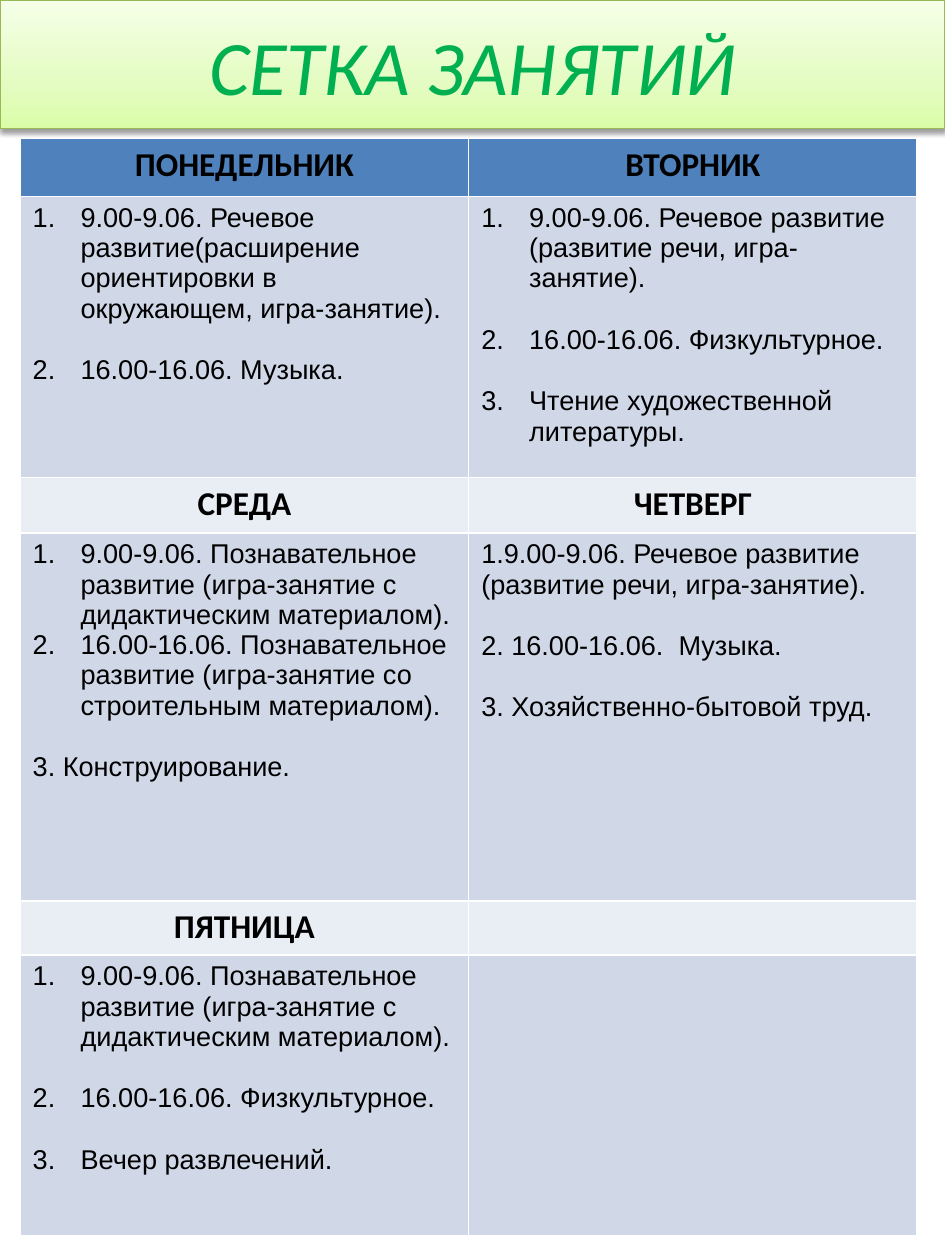
from copy import deepcopy

from lxml import etree
from pptx import Presentation
from pptx.dml.color import RGBColor
from pptx.enum.text import MSO_ANCHOR, PP_ALIGN
from pptx.oxml.ns import qn
from pptx.util import Inches, Pt

CENTER = PP_ALIGN.CENTER
MIDDLE = MSO_ANCHOR.MIDDLE
BLACK = RGBColor(0x00, 0x00, 0x00)
GREEN = RGBColor(0x00, 0xB0, 0x50)
OLIVE = RGBColor(0x98, 0xB9, 0x55)
BLUE = RGBColor(0x4F, 0x81, 0xBD)
PALE = RGBColor(0xE9, 0xED, 0xF4)
MIST = RGBColor(0xD0, 0xD8, 0xE8)
STOPS = [
    (0, RGBColor(0xDA, 0xFD, 0xA7)),
    (0.35, RGBColor(0xE4, 0xFC, 0xC2)),
    (1, RGBColor(0xF5, 0xFF, 0xE7)),
]

HEIGHTS = [0.46, 2.23, 0.44, 2.92, 0.43, 2.23]
INDENT = Inches(0.38)
GAP = Pt(17.8)
NUMBER, HANG, PLAIN = "number", "hang", "plain"

PLAY = "9.00-9.06. Познавательное развитие (игра-занятие с дидактическим материалом)."
SPEECH = "9.00-9.06. Речевое развитие (развитие речи, игра-занятие)."
SPORT = "16.00-16.06. Физкультурное."

# Each item is (kind, gap before, text).
DAYS = [
    ("ПОНЕДЕЛЬНИК", [
        (NUMBER, False, "9.00-9.06. Речевое развитие(расширение ориентировки "
                        "в окружающем, игра-занятие)."),
        (NUMBER, True, "16.00-16.06. Музыка."),
    ]),
    ("ВТОРНИК", [
        (NUMBER, False, SPEECH),
        (NUMBER, True, SPORT),
        (NUMBER, True, "Чтение художественной литературы."),
    ]),
    ("СРЕДА", [
        (NUMBER, False, PLAY),
        (NUMBER, False, "16.00-16.06. Познавательное развитие (игра-занятие "
                        "со строительным материалом)."),
        (HANG, True, "3. Конструирование."),
    ]),
    ("ЧЕТВЕРГ", [
        (PLAIN, False, "1." + SPEECH),
        (PLAIN, True, "2. 16.00-16.06.  Музыка."),
        (PLAIN, True, "3. Хозяйственно-бытовой труд."),
    ]),
    ("ПЯТНИЦА", [
        (NUMBER, False, PLAY),
        (NUMBER, True, SPORT),
        (NUMBER, True, "Вечер развлечений."),
    ]),
]


def style(para, name, size, color, bold=False, italic=False):
    """Format every run of a paragraph."""
    for run in para.runs:
        font = run.font
        font.name, font.size = name, Pt(size)
        font.bold, font.italic = bold, italic
        font.color.rgb = color


def shade(shape):
    """Give a shape the green gradient."""
    fill = shape.fill
    fill.gradient()
    fill.gradient_angle = 90
    group = shape._element.spPr.find(".//" + qn("a:gsLst"))
    group.append(deepcopy(group[-1]))
    for stop, (place, color) in zip(fill.gradient_stops, STOPS):
        stop.position = place
        stop.color.rgb = color


def shadow(shape):
    """Give a shape a soft shadow below it."""
    shape.shadow.inherit = False
    effects = shape._element.spPr.find(qn("a:effectLst"))
    outer = etree.SubElement(
        effects, qn("a:outerShdw"), blurRad=str(Pt(3.1)), dist=str(Pt(1.6)),
        dir="5400000", rotWithShape="0")
    color = etree.SubElement(outer, qn("a:srgbClr"), val="000000")
    etree.SubElement(color, qn("a:alpha"), val="38000")


def banner(slide, text):
    """Format the title as a full-width banner."""
    title = slide.shapes.title
    title.left, title.top = Inches(0), Inches(0)
    title.width, title.height = Inches(7.5), Inches(1.02)
    shade(title)
    title.line.color.rgb = OLIVE
    title.line.width = Pt(0.75)
    shadow(title)
    frame = title.text_frame
    frame.text = text
    frame.vertical_anchor = MIDDLE
    para = frame.paragraphs[0]
    para.alignment = CENTER
    style(para, "Calibri", 44, GREEN, italic=True)


def head(cell, text):
    """Write the name of a day."""
    para = cell.text_frame.paragraphs[0]
    para.text = text
    para.alignment = CENTER
    style(para, "Calibri", 19, BLACK, bold=True)


def plan(cell, items):
    """Write the lessons of a day."""
    frame = cell.text_frame
    for i, (kind, gap, text) in enumerate(items):
        para = frame.add_paragraph() if i else frame.paragraphs[0]
        para.text = text
        if gap:
            para.space_before = GAP
        props = para._p.get_or_add_pPr()
        if kind != PLAIN:
            props.set("marL", str(INDENT))
            props.set("indent", str(-INDENT))
        if kind == NUMBER:
            etree.SubElement(props, qn("a:buFont"), typeface="+mj-lt")
            etree.SubElement(props, qn("a:buAutoNum"), type="arabicPeriod")
        else:
            etree.SubElement(props, qn("a:buNone"))
        style(para, "Arial", 15.5, BLACK)


def grid(slide):
    """Add the timetable, two days to a band."""
    frame = slide.shapes.add_table(
        len(HEIGHTS), 2, Inches(0.16), Inches(1.1), Inches(7.12), Inches(sum(HEIGHTS)))
    table = frame.table
    for i, height in enumerate(HEIGHTS):
        table.rows[i].height = Inches(height)
        for cell in table.rows[i].cells:
            cell.fill.solid()
            cell.fill.fore_color.rgb = MIST if i % 2 else PALE if i else BLUE
    for i, (day, items) in enumerate(DAYS):
        row, col = i // 2 * 2, i % 2
        head(table.cell(row, col), day)
        plan(table.cell(row + 1, col), items)


def main():
    """Build the slide and save it."""
    deck = Presentation()
    deck.slide_width, deck.slide_height = Inches(7.5), Inches(10)
    slide = deck.slides.add_slide(deck.slide_layouts[5])
    banner(slide, "СЕТКА ЗАНЯТИЙ")
    grid(slide)
    deck.save("out.pptx")


if __name__ == "__main__":
    main()
